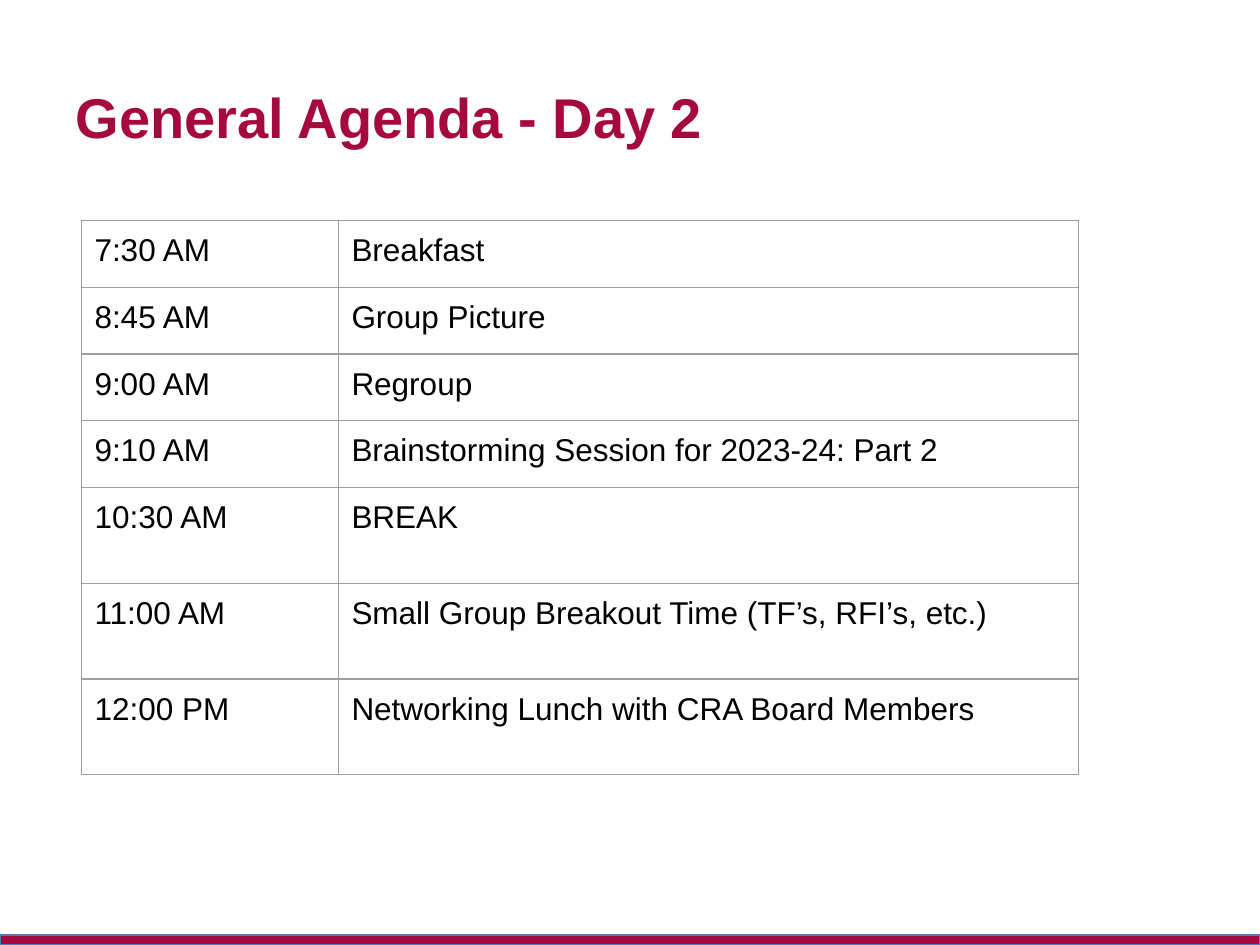
from lxml.etree import SubElement
from pptx import Presentation
from pptx.dml.color import RGBColor
from pptx.enum.shapes import MSO_SHAPE
from pptx.enum.text import MSO_ANCHOR, PP_ALIGN
from pptx.oxml.ns import qn
from pptx.util import Inches, Pt

CRIMSON = RGBColor(0xA6, 0x09, 0x3D)
BLUE = RGBColor(0x4A, 0x7D, 0xBA)
GREY = RGBColor(0x9E, 0x9E, 0x9E)
BLACK = RGBColor(0, 0, 0)
WHITE = RGBColor(0xFF, 0xFF, 0xFF)

FONT = "Arial"
WIDTH, HEIGHT = Inches(10), Inches(7.5)
COLUMNS = (2.04, 5.87)
SHORT_ROW, TALL_ROW = 0.53, 0.76
AGENDA = [
    ("7:30 AM", "Breakfast", SHORT_ROW),
    ("8:45 AM", "Group Picture", SHORT_ROW),
    ("9:00 AM", "Regroup", SHORT_ROW),
    ("9:10 AM", "Brainstorming Session for 2023-24: Part 2", SHORT_ROW),
    ("10:30 AM", "BREAK", TALL_ROW),
    ("11:00 AM", "Small Group Breakout Time (TF’s, RFI’s, etc.)", TALL_ROW),
    ("12:00 PM", "Networking Lunch with CRA Board Members", TALL_ROW),
]


def add_run(p, text, size, color, bold=False):
    r = p.add_run()
    r.text = text
    r.font.name = FONT
    r.font.size = Pt(size)
    r.font.bold = bold
    r.font.color.rgb = color


def add_footer_bar(s):
    height = Inches(0.08)
    sp = s.shapes.add_shape(MSO_SHAPE.RECTANGLE, 0, HEIGHT - height, WIDTH, height)
    sp.shadow.inherit = False
    sp.fill.solid()
    sp.fill.fore_color.rgb = CRIMSON
    sp.line.color.rgb = BLUE
    sp.line.width = Pt(0.75)


def set_title(s, text):
    sp = s.shapes.title
    sp.left, sp.top = int(WIDTH * 0.05), int(HEIGHT * 0.04)
    sp.width, sp.height = int(WIDTH * 0.9), Inches(1.25)
    tf = sp.text_frame
    tf.vertical_anchor = MSO_ANCHOR.MIDDLE
    p = tf.paragraphs[0]
    p.alignment = PP_ALIGN.LEFT
    add_run(p, text, 32, CRIMSON, bold=True)


def set_borders(cell):
    tc_pr = cell._tc.get_or_add_tcPr()
    for side in ("a:lnL", "a:lnR", "a:lnT", "a:lnB"):
        ln = SubElement(tc_pr, qn(side), w=str(Pt(0.75)))
        fill = SubElement(ln, qn("a:solidFill"))
        SubElement(fill, qn("a:srgbClr"), val=str(GREY))


def fill_cell(cell, text):
    cell.margin_left = cell.margin_right = Inches(0.1)
    cell.margin_top = cell.margin_bottom = Inches(0.1)
    cell.vertical_anchor = MSO_ANCHOR.TOP
    set_borders(cell)
    cell.fill.solid()
    cell.fill.fore_color.rgb = WHITE
    add_run(cell.text_frame.paragraphs[0], text, 18, BLACK)


def add_agenda(s, rows):
    height = sum(row[-1] for row in rows)
    frame = s.shapes.add_table(len(rows), len(COLUMNS), Inches(0.65), Inches(1.75),
                               Inches(sum(COLUMNS)), Inches(height))
    table = frame.table
    table.first_row = table.horz_banding = False
    for column, width in zip(table.columns, COLUMNS):
        column.width = Inches(width)
    for row, (time, event, row_height) in zip(table.rows, rows):
        row.height = Inches(row_height)
        for cell, text in zip(row.cells, (time, event)):
            fill_cell(cell, text)


def main():
    prs = Presentation()
    prs.slide_width, prs.slide_height = WIDTH, HEIGHT
    s = prs.slides.add_slide(prs.slide_layouts.get_by_name("Title Only"))
    add_footer_bar(s)
    set_title(s, "General Agenda - Day 2")
    add_agenda(s, AGENDA)
    prs.save("out.pptx")


if __name__ == "__main__":
    main()
